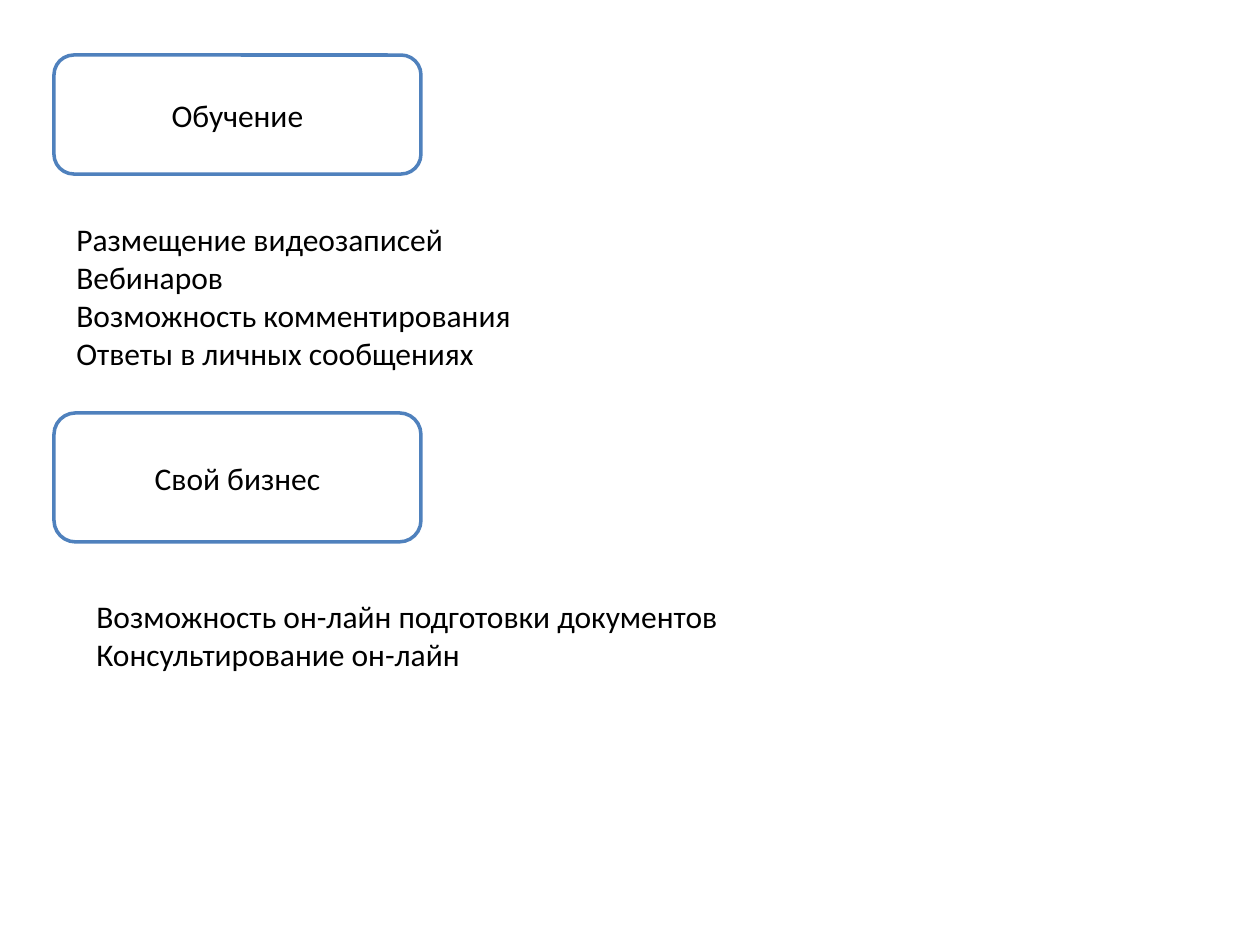
from pptx import Presentation
from pptx import util as u
from pptx.dml.color import RGBColor
from pptx.enum import shapes, text

PX = u.Inches(1) // 126


def color(value):
    return RGBColor.from_string(value)


def write(frame, lines, align=text.PP_ALIGN.LEFT, anchor=text.MSO_ANCHOR.TOP,
          wrap=True, size=18, ink="000000"):
    frame.word_wrap = wrap
    frame.vertical_anchor = anchor
    for i, line in enumerate(lines):
        paragraph = frame.paragraphs[0] if i == 0 else frame.add_paragraph()
        paragraph.alignment = align
        run = paragraph.add_run()
        run.text = line
        run.font.name = "Calibri"
        run.font.size = u.Pt(size)
        run.font.color.rgb = color(ink)


prs = Presentation()
prs.slide_width, prs.slide_height = 1260 * PX, 945 * PX
slide = prs.slides.add_slide(prs.slide_layouts[6])

# heading, its top and height, details, their left, top, width and height
sections = [
    ("Обучение", 55, 119,
     ["Размещение видеозаписей", "Вебинаров",
      "Возможность комментирования", "Ответы в личных сообщениях"],
     (64, 214, 465, 165)),
    ("Свой бизнес", 413, 129,
     ["Возможность он-лайн подготовки документов", "Консультирование он-лайн"],
     (84, 591, 654, 127)),
]

for heading, top, height, details, area in sections:
    card = slide.shapes.add_shape(shapes.MSO_SHAPE.ROUNDED_RECTANGLE,
                                  54 * PX, top * PX, 367 * PX, height * PX)
    card.shadow.inherit = False
    card.fill.solid()
    card.fill.fore_color.rgb = color("FFFFFF")
    card.line.color.rgb = color("4F81BD")
    card.line.width = u.Pt(2)
    write(card.text_frame, [heading], align=text.PP_ALIGN.CENTER,
          anchor=text.MSO_ANCHOR.MIDDLE)

    description = slide.shapes.add_textbox(*(n * PX for n in area))
    write(description.text_frame, details, wrap=False)
    description.text_frame.auto_size = text.MSO_AUTO_SIZE.SHAPE_TO_FIT_TEXT

prs.save("out.pptx")
